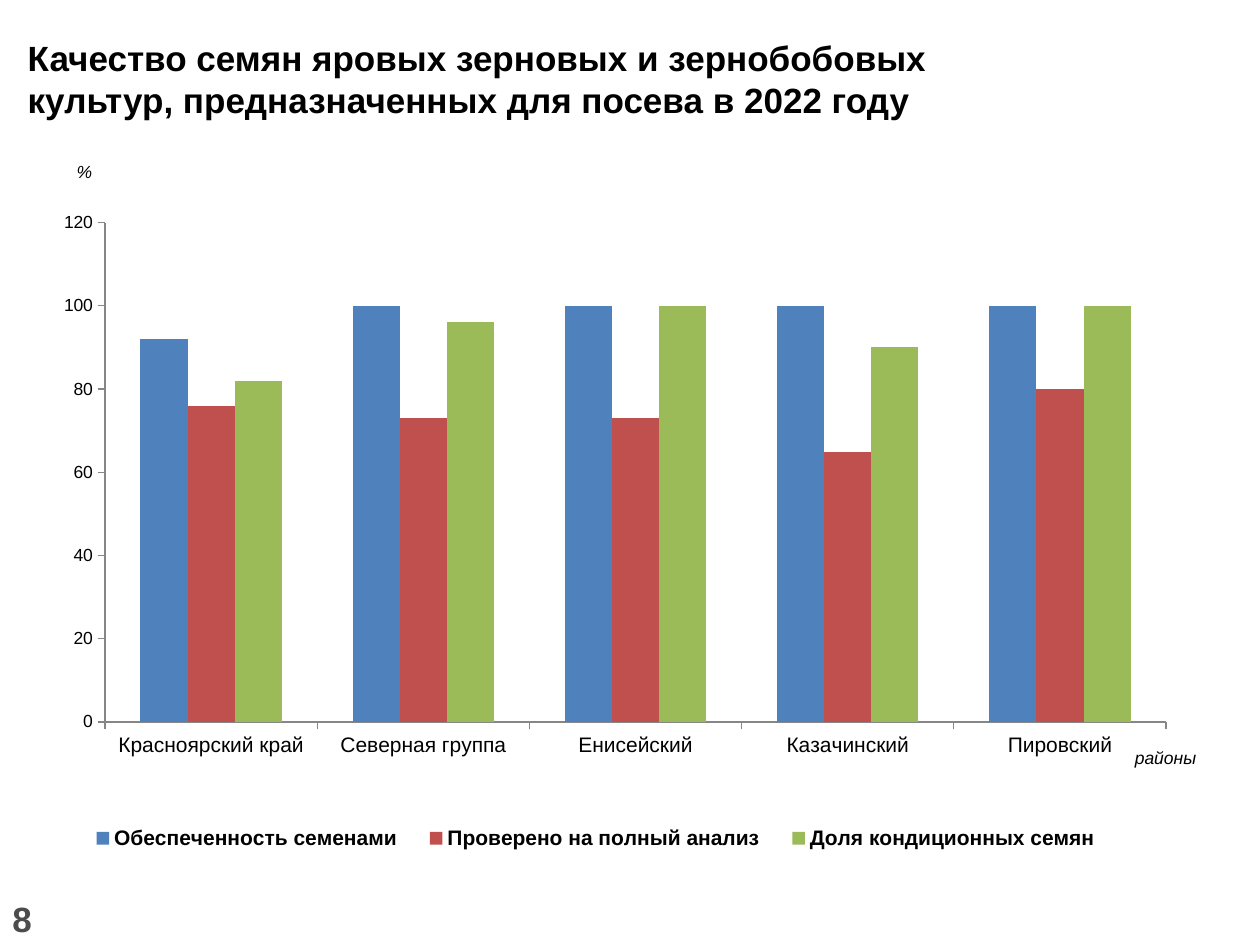
from lxml.etree import SubElement
from pptx import Presentation
from pptx.chart.data import CategoryChartData
from pptx.dml.color import RGBColor
from pptx.enum.chart import XL_CHART_TYPE, XL_LEGEND_POSITION, XL_TICK_MARK
from pptx.enum.text import MSO_ANCHOR, MSO_AUTO_SIZE, PP_ALIGN
from pptx.oxml.ns import qn
from pptx.util import Inches, Pt

COLORS = {
    "text": "000000", "number": "4C4C4C", "axis": "868686",
    "supply": "4F81BD", "tested": "C0504D", "certified": "9BBB59",
}
DISTRICTS = ["Красноярский край", "Северная группа", "Енисейский",
             "Казачинский", "Пировский"]
SERIES = [
    ("Обеспеченность семенами", [92, 100, 100, 100, 100], "supply"),
    ("Проверено на полный анализ", [76, 73, 73, 65, 80], "tested"),
    ("Доля кондиционных семян", [82, 96, 100, 90, 100], "certified"),
]


def rgb(name):
    return RGBColor.from_string(COLORS[name])


class SlideBuilder:
    font = "Arial"

    def __init__(self, prs):
        self.s = prs.slides.add_slide(prs.slide_layouts[5])

    def style(self, font, size, color="text", bold=False, italic=False):
        font.name, font.size = self.font, Pt(size)
        font.bold, font.italic = bold, italic
        font.color.rgb = rgb(color)

    def fill_text(self, sp, text, size, align=PP_ALIGN.LEFT,
                  anchor=MSO_ANCHOR.TOP, **look):
        tf = sp.text_frame
        tf.word_wrap = True
        tf.auto_size = MSO_AUTO_SIZE.NONE
        tf.vertical_anchor = anchor
        p = tf.paragraphs[0]
        p.alignment = align
        r = p.add_run()
        r.text = text
        self.style(r.font, size, **look)

    def title(self, box, text):
        sp = self.s.shapes.title
        sp.left, sp.top, sp.width, sp.height = map(Inches, box)
        self.fill_text(sp, text, 20, anchor=MSO_ANCHOR.MIDDLE, bold=True)

    def text(self, box, text, size, **look):
        sp = self.s.shapes.add_textbox(*map(Inches, box))
        self.fill_text(sp, text, size, **look)

    def layout(self, element, after, box, inner=False):
        """Place a chart part by fractions of the chart area."""
        for old in element.findall(qn("c:layout")):
            element.remove(old)
        layout = SubElement(element, qn("c:layout"))
        manual = SubElement(layout, qn("c:manualLayout"))
        parts = [("layoutTarget", "inner")] if inner else []
        parts += [("xMode", "edge"), ("yMode", "edge")]
        parts += zip("xywh", box)
        for tag, value in parts:
            SubElement(manual, qn(f"c:{tag}")).set("val", str(value))
        if after is None:
            element.insert(0, layout)
        else:
            after.addnext(layout)

    def axis(self, axis, size):
        axis.has_major_gridlines = False
        axis.major_tick_mark = XL_TICK_MARK.OUTSIDE
        axis.minor_tick_mark = XL_TICK_MARK.NONE
        axis.format.line.color.rgb = rgb("axis")
        axis.format.line.width = Pt(0.75)
        self.style(axis.tick_labels.font, size)

    def columns(self, box, categories, series):
        data = CategoryChartData()
        data.categories = categories
        for name, values, _ in series:
            data.add_series(name, values)
        chart = self.s.shapes.add_chart(
            XL_CHART_TYPE.COLUMN_CLUSTERED, *map(Inches, box), data).chart
        chart.has_title = False
        self.style(chart.font, 10)

        # Columns
        plot = chart.plots[0]
        plot.gap_width, plot.overlap = 150, 0
        plot.vary_by_categories = False
        for ser, (_, _, color) in zip(plot.series, series):
            ser.format.fill.solid()
            ser.format.fill.fore_color.rgb = rgb(color)

        # Axes
        self.axis(chart.category_axis, 12)
        self.axis(chart.value_axis, 10)
        chart.value_axis.minimum_scale = 0
        chart.value_axis.maximum_scale = 120
        chart.value_axis.major_unit = 20

        # Legend and plot area positions
        chart.has_legend = True
        legend = chart.legend
        legend.position = XL_LEGEND_POSITION.RIGHT
        legend.include_in_layout = False
        self.style(legend.font, 12, bold=True)
        element = legend._element
        self.layout(element, element.find(qn("c:legendPos")),
                    (0.04, 0.9, 0.92, 0.08))
        area = chart._chartSpace.chart.plotArea
        self.layout(area, None, (0.07, 0.04, 0.93, 0.73), inner=True)


def main():
    prs = Presentation()
    prs.slide_width, prs.slide_height = Inches(10), Inches(7.5)
    slide = SlideBuilder(prs)

    # Title
    slide.title((0.12, 0.21, 7.89, 0.82),
                "Качество семян яровых зерновых и зернобобовых культур, "
                "предназначенных для посева в 2022 году")

    # Chart with its axis captions
    slide.columns((0.2, 1.55, 9.06, 5.43), DISTRICTS, SERIES)
    slide.text((0.51, 1.23, 0.39, 0.27), "%", 10, italic=True)
    slide.text((8.78, 5.88, 0.94, 0.27), "районы", 10,
               align=PP_ALIGN.CENTER, italic=True)

    # Page number
    slide.text((0, 7.17, 0.59, 0.24), "8", 20, anchor=MSO_ANCHOR.MIDDLE,
               color="number", bold=True)

    prs.save("out.pptx")


if __name__ == "__main__":
    main()
